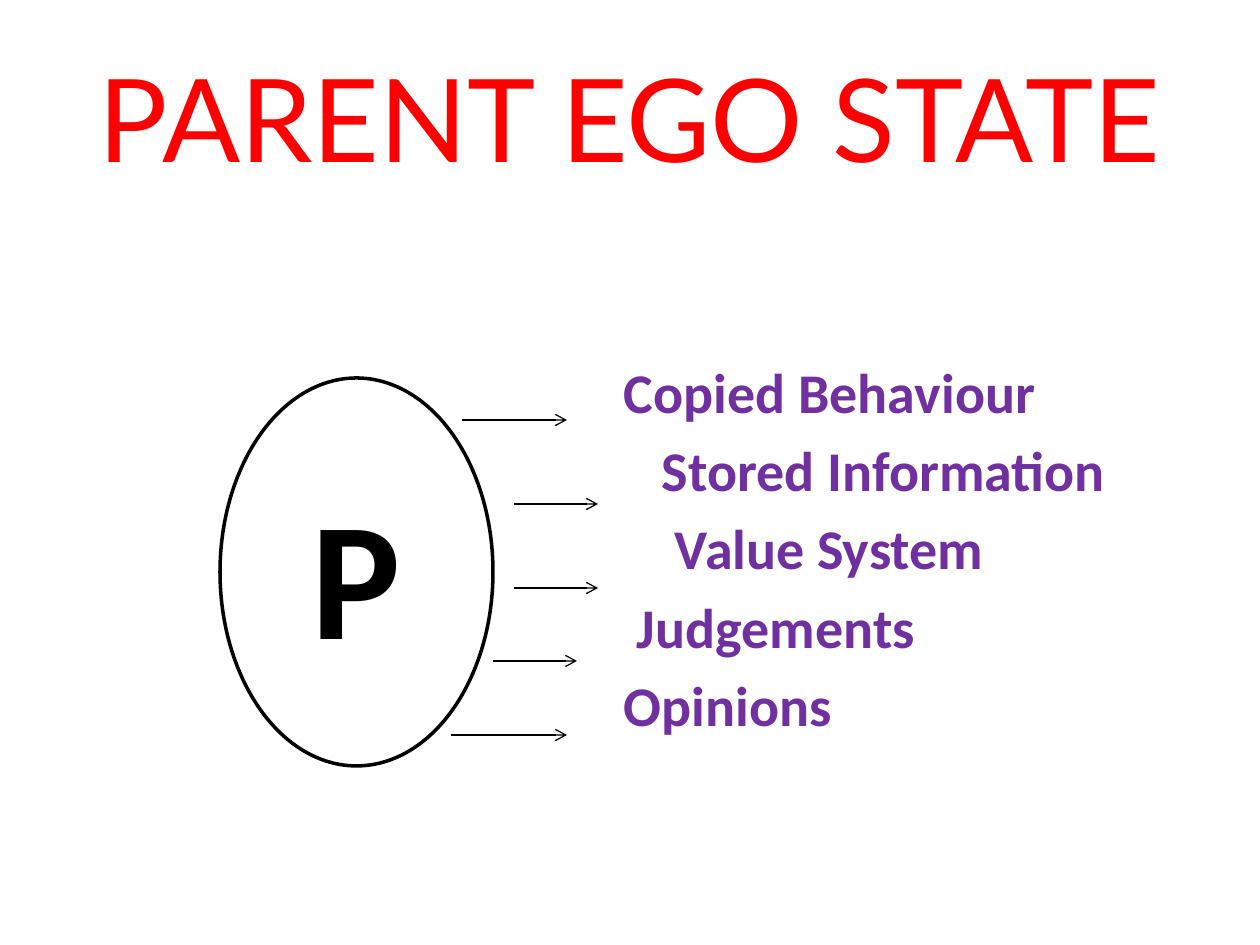
from lxml import etree
from pptx import Presentation
from pptx import util as u
from pptx.dml.color import RGBColor
from pptx.enum import shapes, text
from pptx.oxml.ns import qn

PX = 914400 // 126  # EMU in one px

RED = RGBColor(0xFF, 0x00, 0x00)
PURPLE = RGBColor(0x70, 0x30, 0xA0)
BLACK = RGBColor(0x00, 0x00, 0x00)
WHITE = RGBColor(0xFF, 0xFF, 0xFF)

# Trait and its indent in px
TRAITS = [
    ("Copied Behaviour", 0),
    ("Stored Information", 38),
    ("Value System", 51),
    ("Judgements", 13),
    ("Opinions", 0),
]
# Arrow start x, end x and y in px
ARROWS = [
    (462, 567, 420),
    (514, 598, 504),
    (514, 598, 588),
    (493, 577, 661),
    (451, 567, 735),
]


def px(*lengths):
    return [u.Emu(length * PX) for length in lengths]


def set_all(target, values):
    for name, value in values.items():
        setattr(target, name, value)


def style_font(font, color, **values):
    set_all(font, values)
    font.color.rgb = color


def add_title(slide, wording):
    title = slide.shapes.title
    set_all(title, dict(zip(("left", "top", "width", "height"),
                            px(63, 38, 1134, 157))))
    frame = title.text_frame
    set_all(frame, {"text": wording, "word_wrap": True,
                    "auto_size": text.MSO_AUTO_SIZE.NONE,
                    "vertical_anchor": text.MSO_ANCHOR.MIDDLE})
    heading = frame.paragraphs[0]
    heading.alignment = text.PP_ALIGN.CENTER
    style_font(heading.runs[0].font, RED, name="Lato", size=u.Pt(66))


def add_traits(slide):
    frame = slide.shapes.add_textbox(*px(63, 189, 1103, 725)).text_frame
    margin_left, margin_top, none = px(561, 168, 0)
    set_all(frame, {"word_wrap": True, "margin_left": margin_left,
                    "margin_top": margin_top, "margin_right": none,
                    "margin_bottom": none})
    for number, (trait, indent) in enumerate(TRAITS):
        line = frame.add_paragraph() if number else frame.paragraphs[0]
        line.text = trait
        line.space_after = u.Pt(6.4)
        line._p.get_or_add_pPr().set("marL", str(indent * PX))
        style_font(line.runs[0].font, PURPLE, name="Calibri",
                   size=u.Pt(32), bold=True)


def add_ego_circle(slide, letter):
    circle = slide.shapes.add_shape(shapes.MSO_SHAPE.OVAL,
                                    *px(220, 378, 273, 388))
    circle.shadow.inherit = False
    circle.fill.solid()
    circle.fill.fore_color.rgb = WHITE
    circle.line.color.rgb = BLACK
    circle.line.width = u.Pt(2)
    frame = circle.text_frame
    set_all(frame, {"text": letter,
                    "vertical_anchor": text.MSO_ANCHOR.MIDDLE})
    label = frame.paragraphs[0]
    label.alignment = text.PP_ALIGN.CENTER
    style_font(label.runs[0].font, BLACK, name="Calibri",
               size=u.Pt(96), bold=True)


def add_arrow(slide, start, end, y):
    arrow = slide.shapes.add_connector(shapes.MSO_CONNECTOR.STRAIGHT,
                                       *px(start, y, end, y))
    arrow.line.color.rgb = BLACK
    arrow.line.width = u.Pt(0.75)
    etree.SubElement(arrow.line._get_or_add_ln(), qn("a:tailEnd"),
                     type="arrow")
    etree.SubElement(arrow._element.spPr, qn("a:effectLst"))


def main():
    deck = Presentation()
    deck.slide_width, deck.slide_height = u.Inches(10), u.Inches(7.5)
    slide = deck.slides.add_slide(deck.slide_layouts[5])

    # Title and list of traits
    add_title(slide, "PARENT EGO STATE")
    add_traits(slide)

    # Ego state with an arrow to each trait
    add_ego_circle(slide, "P")
    for start, end, y in ARROWS:
        add_arrow(slide, start, end, y)

    deck.save("out.pptx")


if __name__ == "__main__":
    main()
